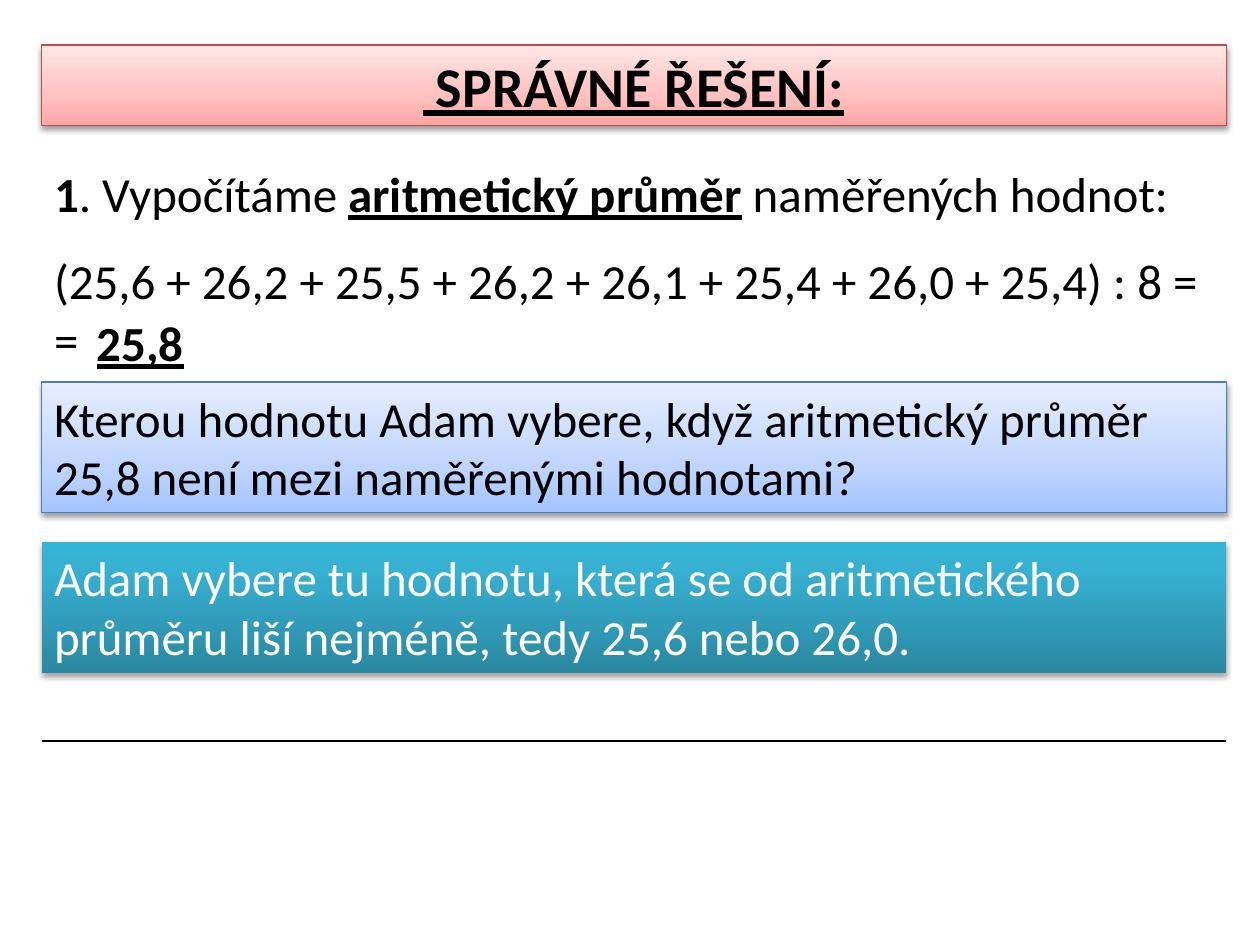
"""Build the slide with the correct solution of the arithmetic mean task."""
import lxml.etree
import pptx
import pptx.dml.color
import pptx.enum.shapes
import pptx.enum.text
import pptx.oxml.ns
import pptx.util

Cm, Pt = pptx.util.Cm, pptx.util.Pt
qn = pptx.oxml.ns.qn
PP_ALIGN = pptx.enum.text.PP_ALIGN

THEME = {
    "font": "Calibri",
    "title_size": 32,
    "body_size": 28,
    "dark": "000000",
    "light": "FFFFFF",
    "hairline": 0.75,
    "red": {"stops": [(0, "FFA6A5"), (35, "FFC0BF"), (100, "FFE7E7")],
            "line": "BF4C48", "shadow": (38, 1.6)},
    "blue": {"stops": [(0, "A4C4FF"), (35, "BFD4FF"), (100, "E6EEFF")],
             "line": "4B7EBC", "shadow": (38, 1.6)},
    "teal": {"stops": [(0, "2A88A2"), (80, "37B1D2"), (100, "34B4D6")],
             "line": None, "shadow": (35, 1.8)},
}

LEFT, WIDTH = 0.84, 23.88
LINE_HEIGHT, PADDING = 1.19, 0.26
RULE_TOP = 14.94

TITLE = [[(" SPRÁVNÉ ŘEŠENÍ:", "bu")]]
STEP = [[("1", "b"), (". Vypočítáme ", ""), ("aritmetický průměr", "bu"),
         (" naměřených hodnot:", "")]]
CALCULATION = [
    [("(25,6 + 26,2 + 25,5 + 26,2 + 26,1 + 25,4 + 26,0 + 25,4) : 8 =", "")],
    [("=", "")],
]
MEAN = [[("25,8", "bu")]]
QUESTION = [
    [("Kterou hodnotu Adam vybere, když aritmetický průměr", "")],
    [("25,8 není mezi naměřenými hodnotami?", "")],
]
ANSWER = [
    [("Adam vybere tu hodnotu, která se od aritmetického", "")],
    [("průměru liší nejméně, tedy 25,6 nebo 26,0.", "")],
]

BANNERS = [
    (TITLE, 0.91, 1.62, "red",
     {"size": THEME["title_size"], "align": PP_ALIGN.CENTER}),
    (QUESTION, 7.7, 2.64, "blue", {}),
    (ANSWER, 10.92, 2.64, "teal", {"color": THEME["light"]}),
]
PASSAGES = [
    (STEP, LEFT, 3.18, 23.04),
    (CALCULATION, LEFT, 4.93, 24.16),
    (MEAN, 1.7, 6.17, 2.29),
]


def rgb(value):
    """Return a colour object for a hex string."""
    return pptx.dml.color.RGBColor.from_string(value)


def add_color(parent, value):
    """Append a colour element and return it."""
    return lxml.etree.SubElement(parent, qn("a:srgbClr"), val=value)


def write(holder, text, size=THEME["body_size"], color=THEME["dark"],
          align=PP_ALIGN.LEFT, wrap=True):
    """Fill a shape with paragraphs of (text, style) runs."""
    frame = holder.text_frame
    frame.word_wrap = wrap
    frame.auto_size = pptx.enum.text.MSO_AUTO_SIZE.SHAPE_TO_FIT_TEXT
    frame.vertical_anchor = pptx.enum.text.MSO_ANCHOR.TOP
    for index, runs in enumerate(text):
        paragraph = frame.add_paragraph() if index else frame.paragraphs[0]
        paragraph.alignment = align
        for words, style in runs:
            run = paragraph.add_run()
            run.text = words
            run.font.name = THEME["font"]
            run.font.size = Pt(size)
            run.font.color.rgb = rgb(color)
            run.font.bold = "b" in style
            run.font.underline = "u" in style


def paint(banner, look):
    """Give a banner its gradient, outline and shadow."""
    banner.fill.gradient()
    banner.fill.gradient_angle = 90
    properties = banner._element.spPr
    stops = properties.find(".//" + qn("a:gsLst"))
    stops.clear()
    for position, color in look["stops"]:
        stop = lxml.etree.SubElement(stops, qn("a:gs"), pos=str(position * 1000))
        add_color(stop, color)
    if look["line"]:
        banner.line.color.rgb = rgb(look["line"])
        banner.line.width = Pt(THEME["hairline"])
    else:
        banner.line.fill.background()
    banner.shadow.inherit = False
    opacity, distance = look["shadow"]
    shadow = lxml.etree.SubElement(
        properties.find(qn("a:effectLst")), qn("a:outerShdw"),
        blurRad=str(Pt(3.1)), dist=str(Pt(distance)), dir="5400000",
        rotWithShape="0")
    lxml.etree.SubElement(add_color(shadow, THEME["dark"]), qn("a:alpha"),
                          val=str(opacity * 1000))


def main():
    """Build and save the slide."""
    deck = pptx.Presentation()
    deck.slide_width, deck.slide_height = Cm(25.4), Cm(19.05)
    shapes = deck.slides.add_slide(deck.slide_layouts[6]).shapes

    def add_banner(text, top, height, look, text_format):
        banner = shapes.add_shape(pptx.enum.shapes.MSO_SHAPE.RECTANGLE,
                                  Cm(LEFT), Cm(top), Cm(WIDTH), Cm(height))
        paint(banner, THEME[look])
        write(banner, text, **text_format)

    title, *replies = BANNERS
    add_banner(*title)
    for text, left, top, width in PASSAGES:
        height = len(text) * LINE_HEIGHT + PADDING
        passage = shapes.add_textbox(Cm(left), Cm(top), Cm(width), Cm(height))
        write(passage, text, wrap=False)
    for reply in replies:
        add_banner(*reply)

    rule = shapes.add_connector(pptx.enum.shapes.MSO_CONNECTOR.STRAIGHT,
                                Cm(LEFT), Cm(RULE_TOP),
                                Cm(LEFT + WIDTH), Cm(RULE_TOP))
    rule.line.color.rgb = rgb(THEME["dark"])
    rule.line.width = Pt(THEME["hairline"])
    lxml.etree.SubElement(rule._element.spPr, qn("a:effectLst"))

    deck.save("out.pptx")


if __name__ == "__main__":
    main()
